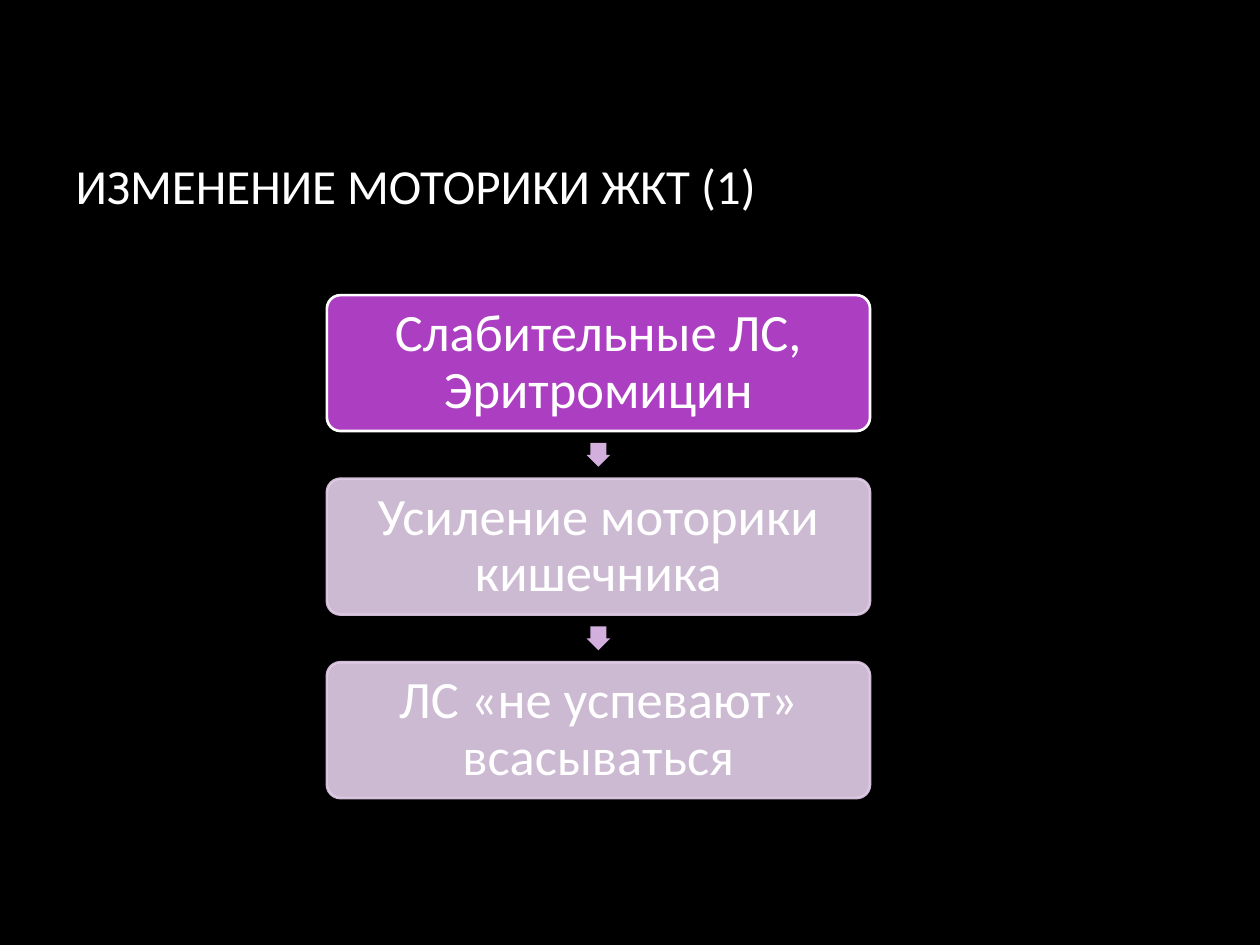
from lxml import etree
from pptx import Presentation
from pptx.dml.color import RGBColor
from pptx.enum.shapes import MSO_SHAPE
from pptx.enum.text import MSO_ANCHOR, PP_ALIGN
from pptx.oxml.ns import qn
from pptx.util import Cm, Pt

BOX, ARROW = MSO_SHAPE.ROUNDED_RECTANGLE, MSO_SHAPE.DOWN_ARROW
MIDDLE = MSO_ANCHOR.MIDDLE
LEFT, CENTER = PP_ALIGN.LEFT, PP_ALIGN.CENTER

THEME = {
    "font": "Calibri",
    "title_size": Pt(28),
    "box_size": Pt(30),
    "background": RGBColor.from_string("000000"),
    "text": RGBColor.from_string("FFFFFF"),
    "accent": RGBColor.from_string("AC3EC1"),
    "pale": RGBColor.from_string("E3CEE9"),
    "arrow": RGBColor.from_string("D2AFDD"),
}
PALE_OPACITY = 90

STEPS = [
    ("Слабительные ЛС, Эритромицин", THEME["accent"], THEME["text"], 100),
    ("Усиление моторики кишечника", THEME["pale"], THEME["pale"], PALE_OPACITY),
    ("ЛС «не успевают» всасываться", THEME["pale"], THEME["pale"], PALE_OPACITY),
]
BOX_LEFT, BOX_TOP, BOX_W, BOX_H = 6.59, 5.95, 10.95, 2.74
STEP_PITCH, ARROW_SIZE = 3.7, 0.48


def write(tf, text, size, align, **spacing):
    tf.word_wrap = True
    tf.vertical_anchor = MIDDLE
    p = tf.paragraphs[0]
    r = p.add_run()
    r.text = text
    for name, value in {"alignment": align, **spacing}.items():
        setattr(p, name, value)
    for name, value in {"name": THEME["font"], "size": size}.items():
        setattr(r.font, name, value)
    r.font.color.rgb = THEME["text"]


prs = Presentation()
prs.slide_width, prs.slide_height = Cm(25.4), Cm(19.05)
s = prs.slides.add_slide(prs.slide_layouts[5])
s.background.fill.solid()
s.background.fill.fore_color.rgb = THEME["background"]

title = s.shapes.title
title.left, title.top, title.width, title.height = Cm(1.27), Cm(1.7), Cm(21.59), Cm(4.04)
write(title.text_frame, "ИЗМЕНЕНИЕ МОТОРИКИ ЖКТ (1)", THEME["title_size"], LEFT)

for i, (text, fill, line, opacity) in enumerate(STEPS):
    top = BOX_TOP + i * STEP_PITCH
    if i:
        gap = STEP_PITCH - BOX_H
        sp = s.shapes.add_shape(
            ARROW,
            Cm(BOX_LEFT + (BOX_W - ARROW_SIZE) / 2),
            Cm(top - (gap + ARROW_SIZE) / 2),
            Cm(ARROW_SIZE), Cm(ARROW_SIZE))
        sp.adjustments[0], sp.adjustments[1] = 0.67, 0.5
        sp.shadow.inherit = False
        sp.fill.solid()
        sp.fill.fore_color.rgb = THEME["arrow"]
        sp.line.fill.background()

    sp = s.shapes.add_shape(BOX, Cm(BOX_LEFT), Cm(top), Cm(BOX_W), Cm(BOX_H))
    sp.adjustments[0] = 0.1
    sp.shadow.inherit = False
    sp.fill.solid()
    sp.fill.fore_color.rgb = fill
    sp.line.color.rgb = line
    sp.line.width = Pt(1.5)
    if opacity < 100:
        for color in sp.fill._xPr.iter(qn("a:srgbClr")):
            etree.SubElement(color, qn("a:alpha"), val=str(opacity * 1000))
    tf = sp.text_frame
    for side in ("left", "top", "right", "bottom"):
        setattr(tf, f"margin_{side}", Cm(0.1))
    write(tf, text, THEME["box_size"], CENTER, line_spacing=0.9)

prs.save("out.pptx")
